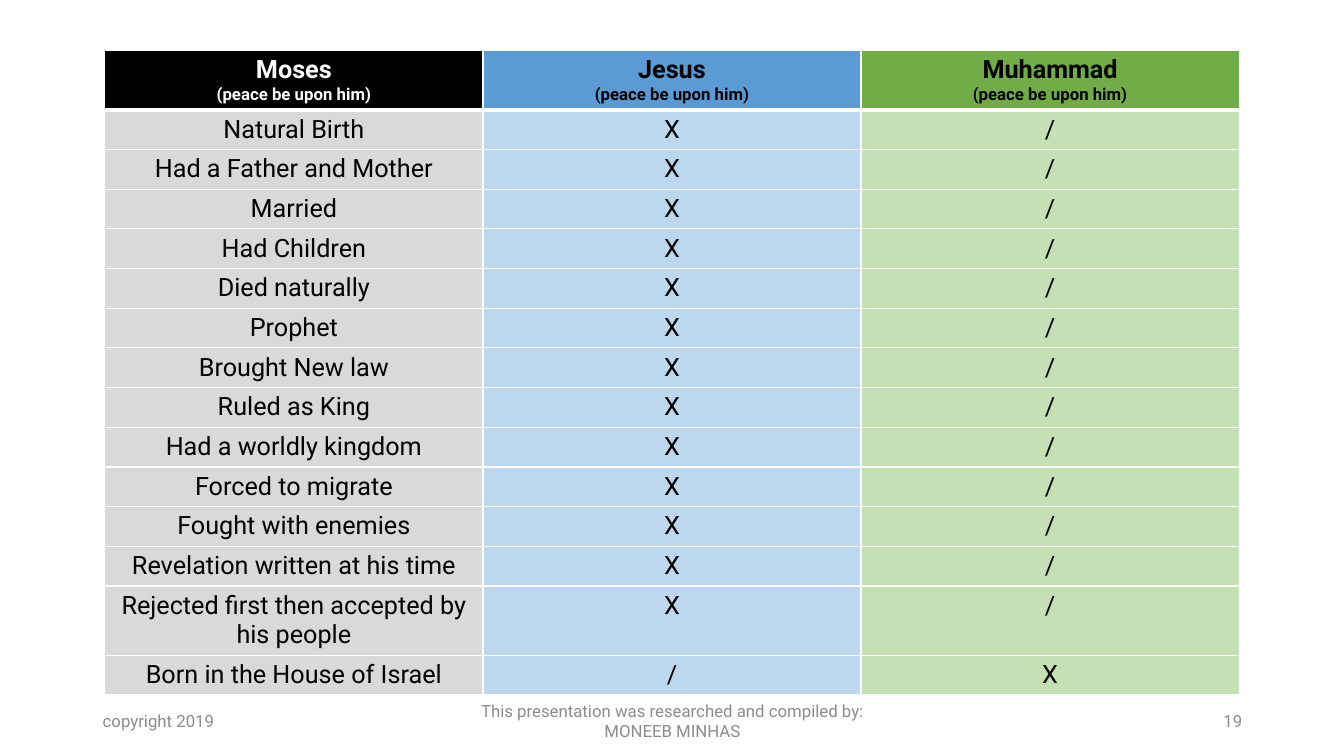
"""Build a slide with a table comparing three prophets."""
from lxml.etree import SubElement
from pptx import Presentation
from pptx.dml.color import RGBColor
from pptx.enum.text import MSO_ANCHOR, PP_ALIGN
from pptx.oxml.ns import qn
from pptx.util import Inches, Pt

FONT = "Roboto"
GREY = "8C8C8C"
BLESSING = "(peace be upon him)"
PROPHETS = [
    ("Moses", "FFFFFF", "000000", "D9D9D9"),
    ("Jesus", "000000", "5B9BD5", "BDD7EE"),
    ("Muhammad", "000000", "70AD47", "C5E0B4"),
]
TRAITS = [
    ("Natural Birth", "X", "/"),
    ("Had a Father and Mother", "X", "/"),
    ("Married", "X", "/"),
    ("Had Children", "X", "/"),
    ("Died naturally", "X", "/"),
    ("Prophet", "X", "/"),
    ("Brought New law", "X", "/"),
    ("Ruled as King", "X", "/"),
    ("Had a worldly kingdom", "X", "/"),
    ("Forced to migrate", "X", "/"),
    ("Fought with enemies", "X", "/"),
    ("Revelation written at his time", "X", "/"),
    ("Rejected first then accepted by his people", "X", "/"),
    ("Born in the House of Israel", "/", "X"),
]
FOOTERS = [
    ("copyright 2019", 0.92, 3, PP_ALIGN.LEFT),
    ("This presentation was researched and compiled by: MONEEB MINHAS",
     4.42, 4.5, PP_ALIGN.CENTER),
    ("19", 9.42, 3, PP_ALIGN.RIGHT),
]
LEFT, TOP, COLUMN = 1.04, 0.5, 3.75
HEADER, ROW, TALL_ROW = 0.58, 0.39, 0.68
WRAP_LENGTH = 35


def rgb(value):
    return RGBColor.from_string(value)


def write(tf, lines, color, align, bold=False):
    tf.text = "\n".join(text for text, _ in lines)
    for p, (_, size) in zip(tf.paragraphs, lines):
        p.alignment = align
        p.font.name, p.font.size, p.font.bold = FONT, Pt(size), bold
        p.font.color.rgb = rgb(color)


def add_borders(cell, top, bottom):
    tcPr = cell._tc.get_or_add_tcPr()
    for tag, width in (("lnL", 1), ("lnR", 1), ("lnT", top), ("lnB", bottom)):
        ln = SubElement(tcPr, qn(f"a:{tag}"), w=str(Pt(width)))
        SubElement(SubElement(ln, qn("a:solidFill")), qn("a:srgbClr"), val="FFFFFF")


def fill_cell(cell, lines, color, background, bold=False, top=1, bottom=1):
    write(cell.text_frame, lines, color, PP_ALIGN.CENTER, bold)
    add_borders(cell, top, bottom)
    cell.fill.solid()
    cell.fill.fore_color.rgb = rgb(background)


def add_comparison(s):
    heights = [HEADER] + [TALL_ROW if len(t[0]) > WRAP_LENGTH else ROW for t in TRAITS]
    table = s.shapes.add_table(
        len(heights), len(PROPHETS), Inches(LEFT), Inches(TOP),
        Inches(COLUMN * len(PROPHETS)), Inches(sum(heights))).table
    for row, height in zip(table.rows, heights):
        row.height = Inches(height)
    for c, (name, color, dark, light) in enumerate(PROPHETS):
        table.columns[c].width = Inches(COLUMN)
        fill_cell(table.cell(0, c), [(name, 18), (BLESSING, 12)], color, dark,
                  bold=True, bottom=3)
        for r, trait in enumerate(TRAITS, 1):
            fill_cell(table.cell(r, c), [(trait[c], 18)], "000000", light,
                      top=3 if r == 1 else 1)


def add_footers(s):
    for text, left, width, align in FOOTERS:
        tf = s.shapes.add_textbox(
            Inches(left), Inches(6.95), Inches(width), Inches(0.4)).text_frame
        tf.word_wrap = True
        tf.vertical_anchor = MSO_ANCHOR.MIDDLE
        write(tf, [(text, 12)], GREY, align)


def main():
    prs = Presentation()
    prs.slide_width, prs.slide_height = Inches(13.33), Inches(7.5)
    s = prs.slides.add_slide(prs.slide_layouts[6])
    add_comparison(s)
    add_footers(s)
    prs.save("out.pptx")


if __name__ == "__main__":
    main()
